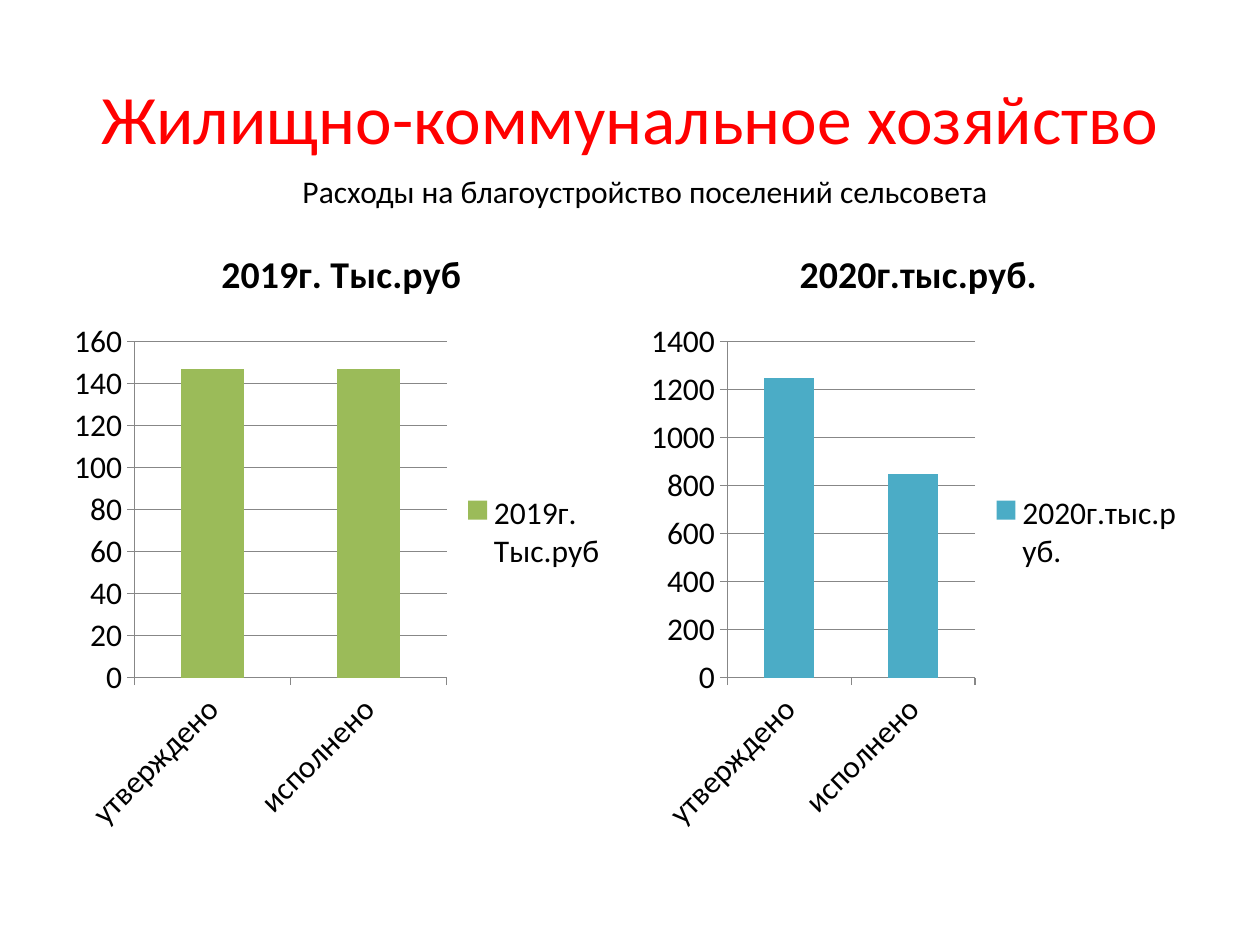
from dataclasses import dataclass

from pptx import Presentation
from pptx import util as u
from pptx.chart.data import CategoryChartData
from pptx.dml.color import RGBColor
from pptx.enum import chart as charts, text

RED = RGBColor(0xFF, 0x00, 0x00)
BLACK = RGBColor(0x00, 0x00, 0x00)
GREEN = RGBColor(0x9B, 0xBB, 0x59)
TEAL = RGBColor(0x4B, 0xAC, 0xC6)
GREY = RGBColor(0x87, 0x87, 0x87)
FONT = "Calibri"
CATEGORIES = ("утверждено", "исполнено")
SLANTED_UP = "-2700000"


@dataclass(frozen=True)
class Label:
    wording: str
    left: float
    top: float
    width: float
    height: float
    size: float
    color: RGBColor
    wrap: bool


@dataclass(frozen=True)
class YearChart:
    name: str
    left: float
    values: tuple[int, int]
    color: RGBColor
    maximum: int
    step: int


LABELS = (
    Label("Жилищно-коммунальное хозяйство", 1.27, 0.76, 22.86, 3.18, 39.6, RED, True),
    Label("Расходы на благоустройство поселений сельсовета", 5.51, 3.33, 14.99, 1.02, 18, BLACK, False),
)
YEAR_CHARTS = (
    YearChart("2019г. Тыс.руб", 1.27, (147, 147), GREEN, 160, 20),
    YearChart("2020г.тыс.руб.", 12.9, (1250, 850), TEAL, 1400, 200),
)


def style_font(font, size: float, color: RGBColor, bold: bool = False) -> None:
    font.name = FONT
    font.size = u.Pt(size)
    font.bold = bold
    font.color.rgb = color


def style_line(line) -> None:
    line.color.rgb = GREY
    line.width = u.Pt(0.75)


def add_label(slide, label: Label) -> None:
    shape = slide.shapes.add_textbox(
        u.Cm(label.left), u.Cm(label.top), u.Cm(label.width), u.Cm(label.height)
    )
    frame = shape.text_frame
    frame.text = label.wording
    frame.word_wrap = label.wrap
    frame.vertical_anchor = text.MSO_ANCHOR.MIDDLE
    paragraph = frame.paragraphs[0]
    paragraph.alignment = text.PP_ALIGN.CENTER
    style_font(paragraph.runs[0].font, label.size, label.color)


def add_year_chart(slide, year: YearChart) -> None:
    data = CategoryChartData()
    data.categories = CATEGORIES
    data.add_series(year.name, year.values)
    chart = slide.shapes.add_chart(
        charts.XL_CHART_TYPE.COLUMN_STACKED,
        u.Cm(year.left), u.Cm(4.45), u.Cm(11.23), u.Cm(12.57), data,
    ).chart
    style_font(chart.font, 18, BLACK)

    chart.has_title = True
    title = chart.chart_title.text_frame
    title.text = year.name
    style_font(title.paragraphs[0].runs[0].font, 21.6, BLACK, bold=True)

    chart.has_legend = True
    chart.legend.position = charts.XL_LEGEND_POSITION.RIGHT
    chart.legend.include_in_layout = False

    plot = chart.plots[0]
    plot.gap_width = 150
    plot.overlap = 100
    plot.vary_by_categories = False
    fill = plot.series[0].format.fill
    fill.solid()
    fill.fore_color.rgb = year.color

    for axis in (chart.category_axis, chart.value_axis):
        axis.major_tick_mark = charts.XL_TICK_MARK.OUTSIDE
        axis.minor_tick_mark = charts.XL_TICK_MARK.NONE
        style_line(axis.format.line)
        style_font(axis.tick_labels.font, 18, BLACK)
    chart.category_axis._element.txPr.bodyPr.set("rot", SLANTED_UP)
    chart.value_axis.minimum_scale = 0
    chart.value_axis.maximum_scale = year.maximum
    chart.value_axis.major_unit = year.step
    chart.value_axis.has_major_gridlines = True
    style_line(chart.value_axis.major_gridlines.format.line)


def main() -> None:
    presentation = Presentation()
    presentation.slide_width = u.Cm(25.4)
    presentation.slide_height = u.Cm(19.05)
    slide = presentation.slides.add_slide(presentation.slide_layouts[6])
    title, subtitle = LABELS
    add_label(slide, title)
    for year in YEAR_CHARTS:
        add_year_chart(slide, year)
    add_label(slide, subtitle)
    presentation.save("out.pptx")


if __name__ == "__main__":
    main()
